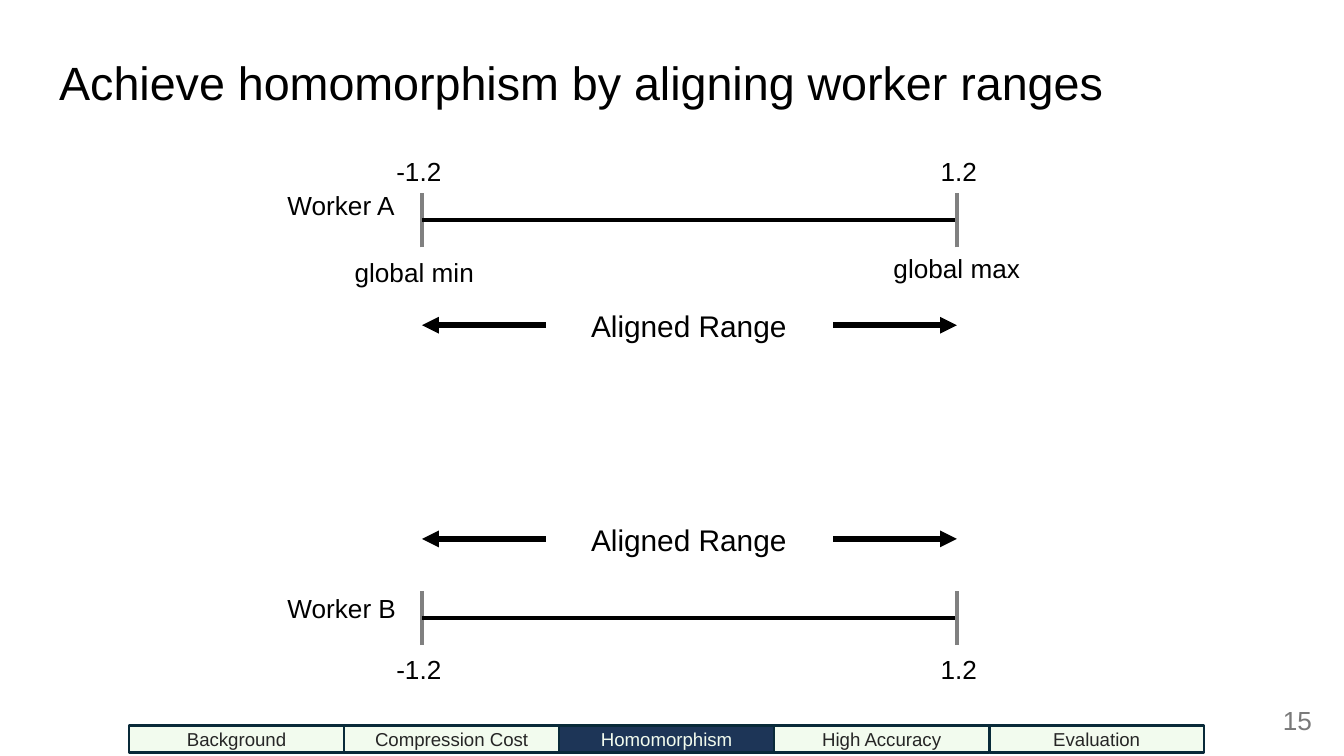
"""Build a slide on aligning worker ranges for homomorphism."""
from lxml.etree import SubElement
from pptx import Presentation
from pptx.dml.color import RGBColor
from pptx.enum.shapes import MSO_CONNECTOR, MSO_SHAPE
from pptx.enum.text import MSO_ANCHOR, MSO_AUTO_SIZE, PP_ALIGN
from pptx.oxml.ns import qn
from pptx.util import Inches, Pt

COLORS = {
    "text": "000000",
    "tick": "808080",
    "number": "797979",
    "tab": "F2FBEE",
    "active": "1D3557",
    "border": "092A39",
    "tab_text": "262626",
}
RANGE_LEFT, RANGE_RIGHT = 3.14, 7.12
TABS = ["Background", "Compression Cost", "Homomorphism", "High Accuracy", "Evaluation"]
ACTIVE_TAB = "Homomorphism"
TAB_WIDTH = 1.6


def color(name):
    return RGBColor.from_string(COLORS[name])


def place(shape, left, top, width, height):
    shape.left, shape.top = Inches(left), Inches(top)
    shape.width, shape.height = Inches(width), Inches(height)


def write(shape, text, size, tint="text", align=PP_ALIGN.LEFT, anchor=MSO_ANCHOR.TOP):
    frame = shape.text_frame
    frame.word_wrap = True
    frame.vertical_anchor = anchor
    frame.text = text
    para = frame.paragraphs[0]
    para.alignment = align
    para.font.name = "Arial"
    para.font.size = Pt(size)
    para.font.color.rgb = color(tint)
    return frame


def set_insets(frame, inset):
    frame.margin_left = frame.margin_right = Inches(inset)
    frame.margin_top = frame.margin_bottom = Inches(inset)


def add_title(slide, text):
    title = slide.shapes.title
    place(title, 0.34, 0.35, 8.83, 1.09)
    frame = write(title, text, 25)
    frame.auto_size = MSO_AUTO_SIZE.NONE
    frame.paragraphs[0].line_spacing = 0.9
    set_insets(frame, 0.1)


def add_label(slide, text, left, top, width, height=0.34, size=14, **style):
    box = slide.shapes.add_textbox(
        Inches(left), Inches(top), Inches(width), Inches(height))
    return write(box, text, size, **style)


def add_line(slide, start, end, tint="text", width=2.25, arrow=False):
    points = [Inches(value) for value in (*start, *end)]
    line = slide.shapes.add_connector(MSO_CONNECTOR.STRAIGHT, *points)
    line.line.color.rgb = color(tint)
    line.line.width = Pt(width)
    properties = line._element.spPr
    if arrow:
        SubElement(properties.find(qn("a:ln")), qn("a:tailEnd"), type="triangle")
    SubElement(properties, qn("a:effectLst"))


def add_worker(slide, name, name_top, axis, values_top):
    set_insets(add_label(slide, name, 2.04, name_top, 1.04, 0.44), 0.1)
    add_line(slide, (RANGE_LEFT, axis + 0.2), (RANGE_LEFT, axis - 0.2), "tick")
    add_line(slide, (RANGE_LEFT, axis), (RANGE_RIGHT, axis))
    add_line(slide, (RANGE_RIGHT, axis + 0.2), (RANGE_RIGHT, axis - 0.2), "tick")
    add_label(slide, "-1.2", 2.85, values_top, 0.55)
    add_label(slide, "1.2", 6.9, values_top, 0.5)


def add_aligned_range(slide, middle):
    for end, inward in ((RANGE_LEFT, 0.92), (RANGE_RIGHT, -0.92)):
        add_line(slide, (end + inward, middle), (end, middle), width=3, arrow=True)
    add_label(slide, "Aligned Range", 4.13, middle - 0.18, 1.99, 0.37, 16,
              align=PP_ALIGN.CENTER)


def add_tab(slide, text, left):
    active = text == ACTIVE_TAB
    tab = slide.shapes.add_shape(
        MSO_SHAPE.RECTANGLE, Inches(left), Inches(5.4), Inches(TAB_WIDTH), Inches(0.2))
    tab.shadow.inherit = False
    tab.fill.solid()
    tab.fill.fore_color.rgb = color("active" if active else "tab")
    tab.line.color.rgb = color("border")
    tab.line.width = Pt(1.5)
    write(tab, text, 10, "tab" if active else "tab_text",
          PP_ALIGN.CENTER, MSO_ANCHOR.MIDDLE)


def main():
    deck = Presentation()
    deck.slide_width, deck.slide_height = Inches(10), Inches(10 * 9 / 16)
    slide = deck.slides.add_slide(deck.slide_layouts.get_by_name("Title Only"))
    add_title(slide, "Achieve homomorphism by aligning worker ranges")
    add_worker(slide, "Worker A", 1.31, 1.64, 1.11)
    add_worker(slide, "Worker B", 4.31, 4.6, 4.81)
    for middle in (2.42, 4.01):
        add_aligned_range(slide, middle)
    add_label(slide, "global min", 2.54, 1.86, 1.13)
    add_label(slide, "global max", 6.55, 1.83, 1.17)
    add_label(slide, "15", 7.61, 5.21, 2.25, 0.3, tint="number",
              align=PP_ALIGN.RIGHT, anchor=MSO_ANCHOR.MIDDLE)
    for index, text in enumerate(TABS):
        add_tab(slide, text, 0.96 + index * TAB_WIDTH)
    deck.save("out.pptx")


if __name__ == "__main__":
    main()
